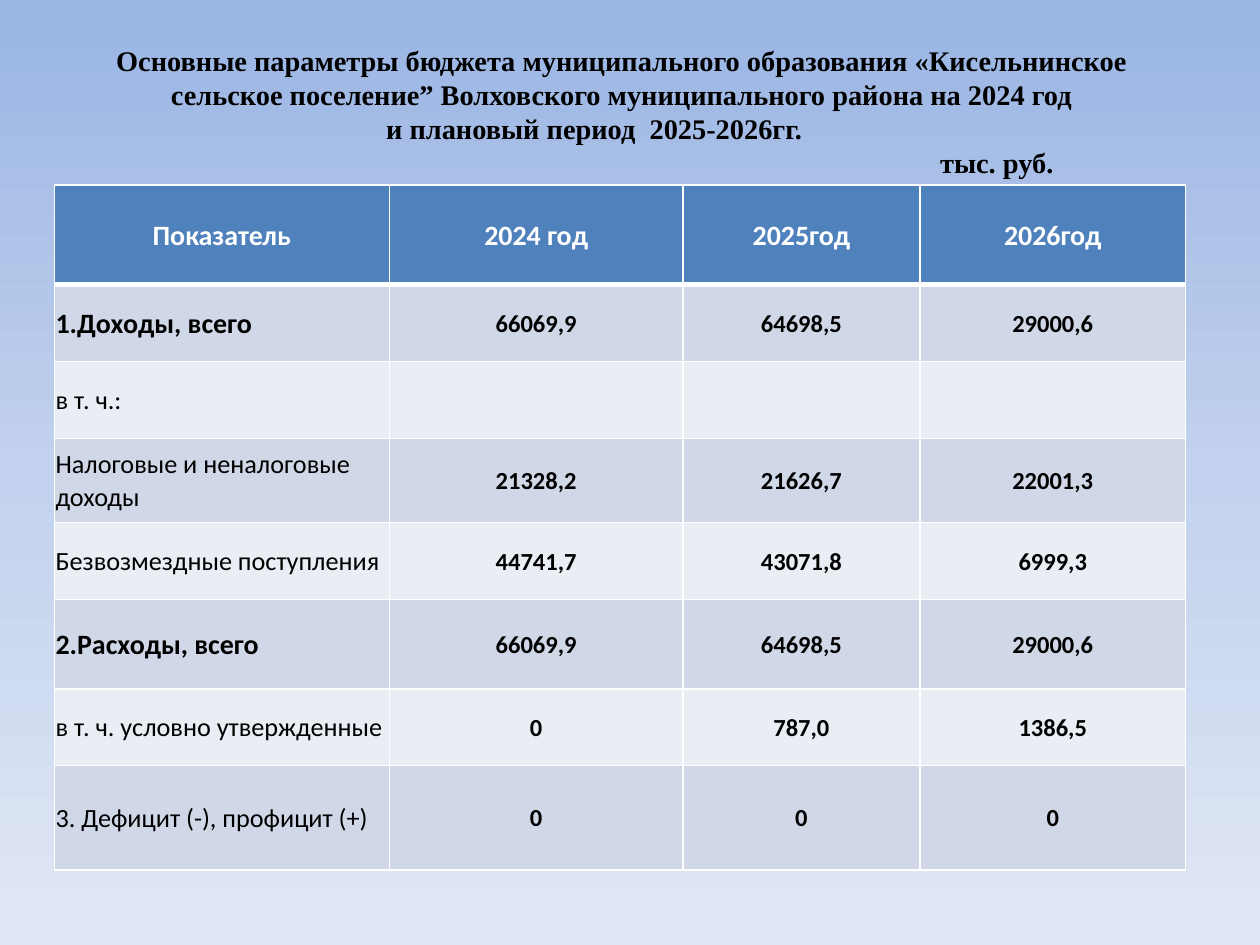
"""Build a slide with the main figures of a municipal budget."""
import copy

import pptx
import pptx.dml.color
import pptx.enum.text
import pptx.oxml
import pptx.oxml.ns
import pptx.util

Pt = pptx.util.Pt
RGBColor = pptx.dml.color.RGBColor
Align = pptx.enum.text.PP_ALIGN
Anchor = pptx.enum.text.MSO_ANCHOR

BLACK = RGBColor(0x00, 0x00, 0x00)
WHITE = RGBColor(0xFF, 0xFF, 0xFF)
HEADER_BLUE = RGBColor(0x4F, 0x81, 0xBD)
BANDS = (RGBColor(0xD0, 0xD8, 0xE8), RGBColor(0xE9, 0xED, 0xF4))
BACKGROUND = (
    (0, RGBColor(0x9A, 0xB5, 0xE4)),
    (0.5, RGBColor(0xC2, 0xD1, 0xED)),
    (1, RGBColor(0xE1, 0xE8, 0xF5)),
)

TITLE = (
    ("Основные параметры бюджета муниципального образования «Кисельнинское "
     "сельское поселение” Волховского муниципального района на 2024 год", Align.CENTER, 0),
    ("и плановый период  2025-2026гг.", Align.CENTER, 31),
    ("тыс. руб.", Align.RIGHT, 70),
)
ROWS = (
    ("Показатель", "2024 год", "2025год", "2026год"),
    ("1.Доходы, всего", "66069,9", "64698,5", "29000,6"),
    ("в т. ч.:", "", "", ""),
    ("Налоговые и неналоговые доходы", "21328,2", "21626,7", "22001,3"),
    ("Безвозмездные поступления", "44741,7", "43071,8", "6999,3"),
    ("2.Расходы, всего", "66069,9", "64698,5", "29000,6"),
    ("в т. ч. условно утвержденные", "0", "787,0", "1386,5"),
    ("3. Дефицит (-), профицит (+)", "0", "0", "0"),
)
TOTAL_ROWS = (1, 5)
COLUMN_WIDTHS = (191.5, 167.8, 135.4, 151.9)
ROW_HEIGHTS = (56.9, 43.9, 43.9, 48.2, 43.9, 51.1, 43.9, 59.8)
LEFT, TITLE_TOP, TABLE_TOP = 31, 21, 105.8
TITLE_WIDTH, TITLE_HEIGHT = 648, 85

TITLE_FONT = {"name": "Times New Roman", "size": Pt(16.2), "bold": True}
HEADER_FONT = {"name": "Calibri", "size": Pt(16), "bold": True}
LABEL_FONT = {"name": "Calibri", "size": Pt(15), "bold": False}
VALUE_FONT = {"name": "Calibri", "size": Pt(14), "bold": True}
CELL_FORMAT = {
    "margin_left": Pt(0.75), "margin_right": Pt(0.75), "margin_top": Pt(0.75),
    "margin_bottom": Pt(0), "vertical_anchor": Anchor.MIDDLE,
}


def apply_format(target, values):
    for name, value in values.items():
        setattr(target, name, value)


def write_paragraph(paragraph, text, alignment, font, color):
    paragraph.alignment = alignment
    run = paragraph.add_run()
    run.text = text
    apply_format(run.font, font)
    run.font.color.rgb = color


def paint_background(slide):
    fill = slide.background.fill
    fill.gradient()
    fill.gradient_angle = 270
    stop_list = slide.element.xpath(".//a:gsLst")[0]
    stop_list.append(copy.deepcopy(stop_list[-1]))
    for stop, (position, color) in zip(fill.gradient_stops, BACKGROUND):
        stop.position = position
        stop.color.rgb = color


def add_title(slide):
    box = slide.shapes.add_textbox(Pt(LEFT), Pt(TITLE_TOP), Pt(TITLE_WIDTH), Pt(TITLE_HEIGHT))
    frame = box.text_frame
    apply_format(frame, {"word_wrap": True, "vertical_anchor": Anchor.MIDDLE})
    for index, (text, alignment, right_indent) in enumerate(TITLE):
        paragraph = frame.add_paragraph() if index else frame.paragraphs[0]
        write_paragraph(paragraph, text, alignment, TITLE_FONT, BLACK)
        paragraph.line_spacing = Pt(19.4)
        paragraph._p.get_or_add_pPr().set("marR", str(Pt(right_indent)))


def add_borders(cell, widths):
    properties = cell._tc.get_or_add_tcPr()
    for side, width in widths.items():
        properties.append(pptx.oxml.parse_xml(
            f'<a:ln{side} {pptx.oxml.ns.nsdecls("a")} w="{Pt(width)}"><a:solidFill>'
            f'<a:srgbClr val="{WHITE}"/></a:solidFill></a:ln{side}>'))


def cell_style(row, column):
    if row == 0:
        return Align.CENTER, HEADER_FONT, WHITE
    if column:
        return Align.CENTER, VALUE_FONT, BLACK
    return Align.LEFT, HEADER_FONT if row in TOTAL_ROWS else LABEL_FONT, BLACK


def add_budget_table(slide):
    table = slide.shapes.add_table(
        len(ROWS), len(COLUMN_WIDTHS), Pt(LEFT), Pt(TABLE_TOP),
        Pt(sum(COLUMN_WIDTHS)), Pt(sum(ROW_HEIGHTS))).table
    for column, width in zip(table.columns, COLUMN_WIDTHS):
        column.width = Pt(width)
    for row, height in zip(table.rows, ROW_HEIGHTS):
        row.height = Pt(height)
    for row, texts in enumerate(ROWS):
        for column, text in enumerate(texts):
            cell = table.cell(row, column)
            apply_format(cell, CELL_FORMAT)
            add_borders(cell, {"L": 1, "R": 1, "T": 3 if row == 1 else 1, "B": 1 if row else 3})
            cell.fill.solid()
            cell.fill.fore_color.rgb = BANDS[(row - 1) % 2] if row else HEADER_BLUE
            if text:
                write_paragraph(cell.text_frame.paragraphs[0], text, *cell_style(row, column))


def main():
    presentation = pptx.Presentation()
    apply_format(presentation, {"slide_width": Pt(720), "slide_height": Pt(540)})
    slide = presentation.slides.add_slide(presentation.slide_layouts[6])
    paint_background(slide)
    add_title(slide)
    add_budget_table(slide)
    presentation.save("out.pptx")


if __name__ == "__main__":
    main()
